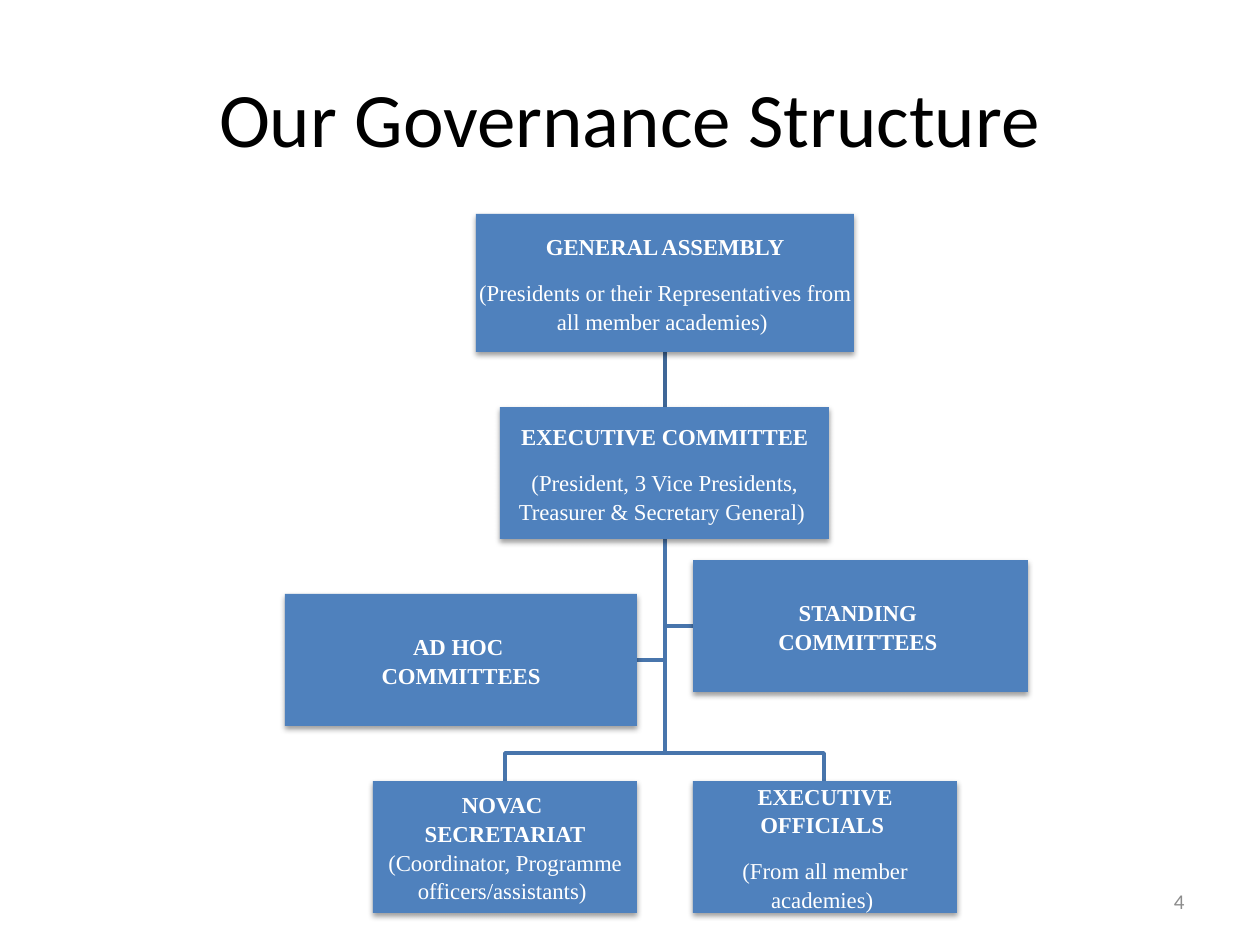
from lxml import etree
from pptx import Presentation
from pptx.dml.color import RGBColor
from pptx.enum.shapes import MSO_CONNECTOR, MSO_SHAPE
from pptx.enum.text import MSO_ANCHOR, PP_ALIGN
from pptx.oxml import parse_xml
from pptx.oxml.ns import qn
from pptx.util import Pt

RECT = MSO_SHAPE.RECTANGLE
LINE = MSO_CONNECTOR.STRAIGHT
MID = MSO_ANCHOR.MIDDLE
CENTER, RIGHT = PP_ALIGN.CENTER, PP_ALIGN.RIGHT
PX = 914400 / 126
SHADOW = """<a:outerShdw
 xmlns:a="http://schemas.openxmlformats.org/drawingml/2006/main"
 blurRad="40000" dist="20000" dir="5400000" rotWithShape="0">
 <a:srgbClr val="000000"><a:alpha val="38000"/></a:srgbClr></a:outerShdw>"""


def emu(*vals):
    return [round(v * PX) for v in vals]


def color(hue):
    return RGBColor.from_string(hue)


prs = Presentation()
prs.slide_width, prs.slide_height = emu(1260, 945)
slide = prs.slides.add_slide(prs.slide_layouts[5])
shapes = slide.shapes

# Title
title = shapes.title
title.left, title.top, title.width, title.height = emu(63, 38, 1134, 157)
title.text_frame.text = "Our Governance Structure"
for key, val in {"size": Pt(44), "name": "Calibri"}.items():
    setattr(title.text_frame.paragraphs[0].runs[0].font, key, val)

# Branches from the executive committee, all starting on the spine
spine, start, fork, base = 665, 539, 753, 781
branches = [
    [(spine, 626), (693, 626)],
    [(spine, 660), (637, 660)],
    [(spine, fork), (824, fork), (824, base)],
    [(spine, fork), (505, fork), (505, base)],
]
for points in branches:
    pen = shapes.build_freeform(spine, start, scale=PX)
    pen.add_line_segments(points, close=False)
    branch = pen.convert_to_shape()
    branch.shadow.inherit = False
    branch.fill.background()
    branch.line.color.rgb = color("4875AC")
    branch.line.width = Pt(2)

# Link from the assembly to the committee
link = shapes.add_connector(LINE, *emu(spine, 352, spine, 407))
link.line.color.rgb = color("3F6797")
link.line.width = Pt(2)
etree.SubElement(link._element.spPr, qn("a:effectLst"))

# Boxes: place, then paragraphs as (text, bold, space after)
boxes = [
    ((476, 214, 378, 138), [
        ("GENERAL ASSEMBLY", True, 10),
        ("(Presidents or their Representatives from all member academies) ", False, 10)]),
    ((500, 407, 329, 132), [
        ("EXECUTIVE COMMITTEE", True, 10),
        ("(President, 3 Vice Presidents, Treasurer & Secretary General) ", False, 0)]),
    ((373, base, 264, 132), [
        ("NOVAC ", True, 0),
        ("SECRETARIAT", True, 0),
        ("(Coordinator, Programme officers/assistants) ", False, 10)]),
    ((693, base, 264, 132), [
        ("EXECUTIVE OFFICIALS ", True, 10),
        ("(From all member academies) ", False, 10)]),
    ((285, 594, 352, 132), [
        ("AD HOC ", True, 0),
        ("COMMITTEES", True, 0)]),
    ((693, 560, 335, 132), [
        ("STANDING ", True, 0),
        ("COMMITTEES ", True, 0)]),
]
margins = {"margin_" + side: Pt(1) for side in ("left", "top", "right", "bottom")}
for place, paras in boxes:
    box = shapes.add_shape(RECT, *emu(*place))
    box.fill.solid()
    box.fill.fore_color.rgb = color("4F81BD")
    box.line.fill.background()
    box.shadow.inherit = False
    box._element.spPr.find(qn("a:effectLst")).append(parse_xml(SHADOW))
    frame = box.text_frame
    for key, val in {"word_wrap": True, "vertical_anchor": MID, **margins}.items():
        setattr(frame, key, val)
    for i, (text, bold, after) in enumerate(paras):
        para = frame.add_paragraph() if i else frame.paragraphs[0]
        style = {"alignment": CENTER, "space_after": Pt(after), "line_spacing": 1.05}
        for key, val in style.items():
            setattr(para, key, val)
        run = para.add_run()
        run.text = text
        for key, val in {"name": "Times New Roman", "size": Pt(13), "bold": bold}.items():
            setattr(run.font, key, val)
        run.font.color.rgb = color("FFFFFF")

# Page number
page = shapes.add_textbox(*emu(903, 876, 294, 50)).text_frame
page.word_wrap = True
page.vertical_anchor = MID
para = page.paragraphs[0]
para.alignment = RIGHT
run = para.add_run()
run.text = "4"
for key, val in {"name": "Calibri", "size": Pt(12)}.items():
    setattr(run.font, key, val)
run.font.color.rgb = color("8C8C8C")

prs.save("out.pptx")
